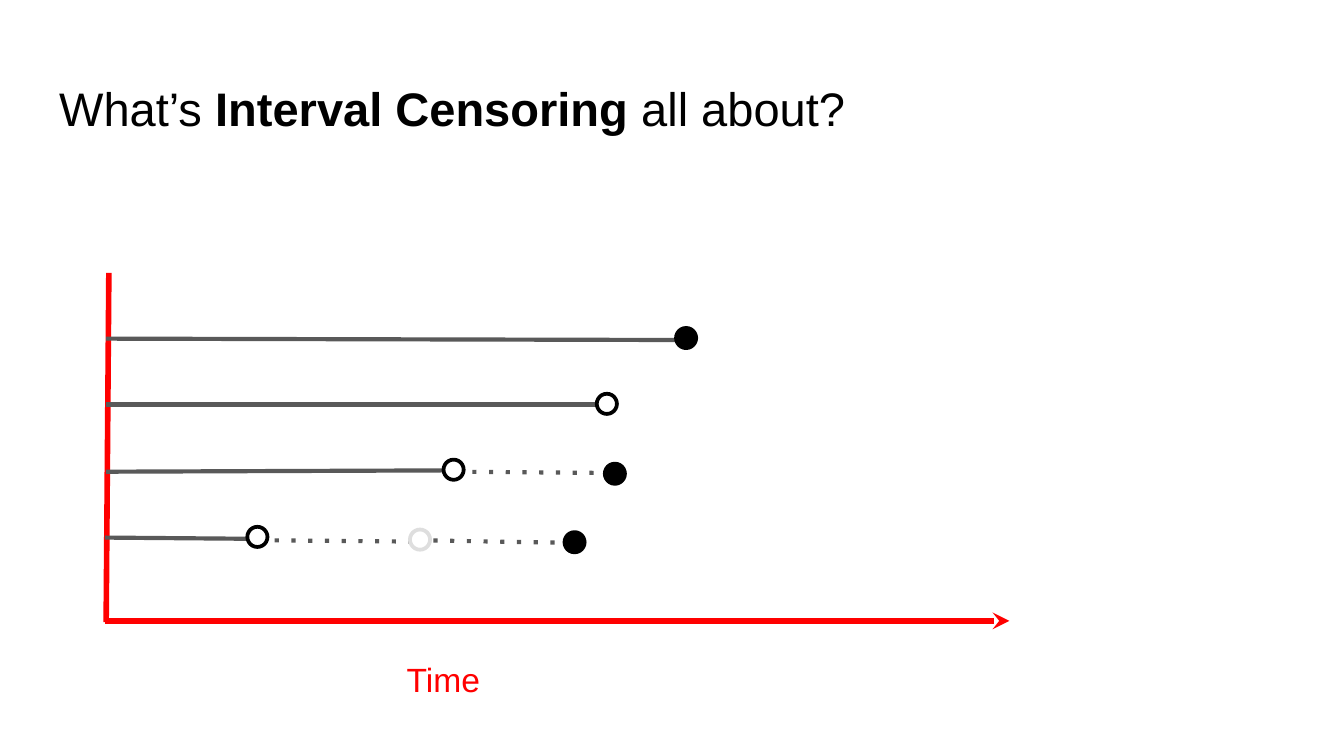
from typing import NamedTuple

from lxml.etree import SubElement
from pptx import Presentation
from pptx.dml.color import RGBColor
from pptx.enum.shapes import MSO_CONNECTOR, MSO_SHAPE
from pptx.enum.text import MSO_ANCHOR, PP_ALIGN
from pptx.oxml.ns import qn
from pptx.shapes.connector import Connector
from pptx.shapes.shapetree import GroupShapes
from pptx.slide import Slide
from pptx.text.text import TextFrame
from pptx.util import Inches, Pt

COLORS = {
    "text": "000000",
    "axis": "FF0000",
    "follow_up": "595959",
    "event": "000000",
    "open": "FFFFFF",
    "faded": "DEDEDE",
}
FONT = "Arial"
MARKER_SIZE = 0.15


class Period(NamedTuple):
    start: tuple[float, float]
    end: tuple[float, float]
    dotted: bool = False


class Marker(NamedTuple):
    left: float
    top: float
    fill: str
    outline: str = "event"


class Subject(NamedTuple):
    periods: list[Period]
    markers: list[Marker]


SUBJECTS = [
    Subject([Period((0.79, 2.52), (5.1, 2.53))], [Marker(5.03, 2.44, "event")]),
    Subject([Period((0.79, 3.01), (4.52, 3.01))], [Marker(4.44, 2.93, "open")]),
    Subject(
        [
            Period((0.79, 3.51), (3.37, 3.5)),
            Period((3.39, 3.51), (4.57, 3.52), dotted=True),
        ],
        [Marker(3.3, 3.42, "open"), Marker(4.5, 3.45, "event")],
    ),
    Subject(
        [
            Period((0.78, 4), (1.95, 4.01)),
            Period((1.92, 4.02), (3.1, 4.03), dotted=True),
            Period((3.1, 4.02), (4.27, 4.04), dotted=True),
        ],
        [
            Marker(4.2, 3.96, "event"),
            Marker(3.05, 3.94, "open", "faded"),
            Marker(1.84, 3.92, "open"),
        ],
    ),
]


def rgb(name: str) -> RGBColor:
    return RGBColor.from_string(COLORS[name])


def set_margins(frame: TextFrame) -> None:
    frame.margin_left = frame.margin_right = Inches(0.1)
    frame.margin_top = frame.margin_bottom = Inches(0.1)
    frame.word_wrap = True


def add_run(frame: TextFrame, text: str, size: float, color: str, bold: bool = False) -> None:
    run = frame.paragraphs[0].add_run()
    run.text = text
    run.font.name = FONT
    run.font.size = Pt(size)
    run.font.bold = bold
    run.font.color.rgb = rgb(color)


def add_line(
    shapes: GroupShapes,
    period: Period,
    color: str,
    width: float,
    end_style: str | None = None,
) -> Connector:
    ends = [Inches(value) for value in (*period.start, *period.end)]
    line = shapes.add_connector(MSO_CONNECTOR.STRAIGHT, *ends)
    line.line.color.rgb = rgb(color)
    line.line.width = Pt(width)
    properties = line.line._get_or_add_ln()
    if period.dotted:
        SubElement(properties, qn("a:prstDash"), val="dot")
    if end_style:
        SubElement(properties, qn("a:tailEnd"), type=end_style, w="med", len="med")
    SubElement(line._element.spPr, qn("a:effectLst"))
    return line


def add_marker(shapes: GroupShapes, marker: Marker) -> None:
    circle = shapes.add_shape(
        MSO_SHAPE.OVAL,
        Inches(marker.left),
        Inches(marker.top),
        Inches(MARKER_SIZE),
        Inches(MARKER_SIZE),
    )
    circle.shadow.inherit = False
    circle.fill.solid()
    circle.fill.fore_color.rgb = rgb(marker.fill)
    circle.line.color.rgb = rgb(marker.outline)
    circle.line.width = Pt(2)


def add_title(slide: Slide) -> None:
    title = slide.shapes.title
    title.left, title.top = Inches(0.34), Inches(0.49)
    title.width, title.height = Inches(9.32), Inches(0.63)
    frame = title.text_frame
    set_margins(frame)
    frame.vertical_anchor = MSO_ANCHOR.TOP
    frame.paragraphs[0].alignment = PP_ALIGN.LEFT
    add_run(frame, "What’s ", 25.2, "text")
    add_run(frame, "Interval Censoring", 25.2, "text", bold=True)
    add_run(frame, " all about?", 25.2, "text")


def add_axes(slide: Slide) -> None:
    shapes = slide.shapes.add_group_shape().shapes
    add_line(shapes, Period((0.78, 4.62), (7.51, 4.62)), "axis", 3, "stealth")
    time_label = shapes.add_textbox(Inches(2.68), Inches(4.8), Inches(1.24), Inches(0.52))
    set_margins(time_label.text_frame)
    time_label.text_frame.paragraphs[0].alignment = PP_ALIGN.CENTER
    add_run(time_label.text_frame, "Time", 18, "axis")
    add_line(shapes, Period((0.79, 4.63), (0.81, 2.03)), "axis", 3)


def add_subject(slide: Slide, subject: Subject) -> None:
    shapes = slide.shapes.add_group_shape().shapes
    for period in subject.periods:
        add_line(shapes, period, "follow_up", 2.25, "oval")
    for marker in subject.markers:
        add_marker(shapes, marker)


def main() -> None:
    presentation = Presentation()
    presentation.slide_width = Inches(10)
    presentation.slide_height = Inches(10 * 9 / 16)
    slide = presentation.slides.add_slide(presentation.slide_layouts[5])
    add_title(slide)
    add_axes(slide)
    for subject in SUBJECTS:
        add_subject(slide, subject)
    presentation.save("out.pptx")


if __name__ == "__main__":
    main()
